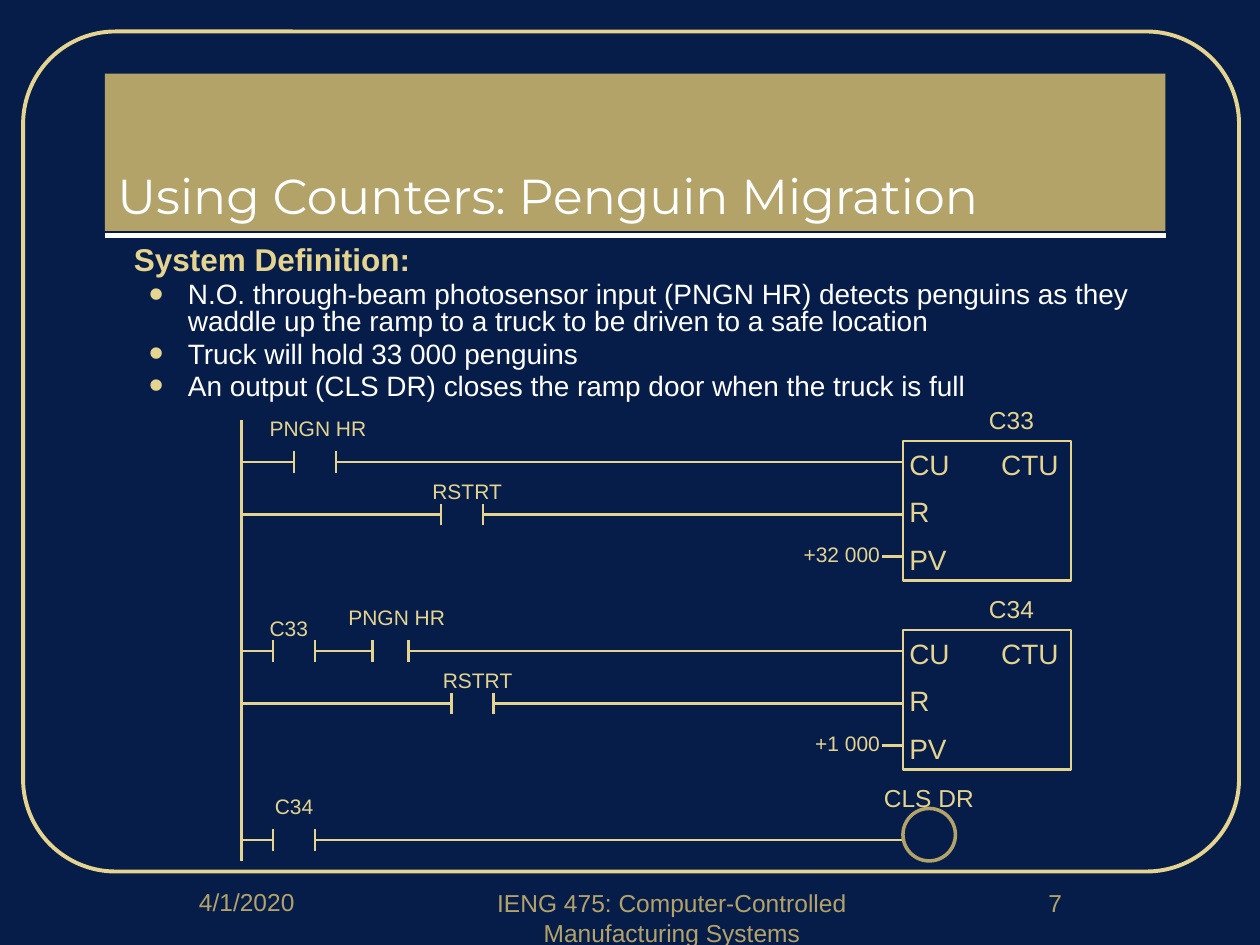
from lxml.etree import SubElement
from pptx import Presentation
from pptx.dml.color import RGBColor
from pptx.enum.shapes import MSO_CONNECTOR as Connector, MSO_SHAPE as Shape
from pptx.enum.text import MSO_ANCHOR as Anchor, PP_ALIGN as Align
from pptx.oxml.ns import qn
from pptx.util import Inches, Pt

NAVY, GOLD, CREAM, WHITE = "071D49", "B3A369", "E4D490", "FFFFFF"
CELL = Inches(1) / 12  # the slide is a grid of 120 columns and 90 rows
color = RGBColor.from_string

presentation = Presentation()
presentation.slide_width, presentation.slide_height = Inches(10), Inches(7.5)
slide = presentation.slides.add_slide(presentation.slide_layouts[6])
slide.background.fill.solid()
slide.background.fill.fore_color.rgb = color(NAVY)


def add_box(kind, column, row, columns, rows, text="", size=12, ink=CREAM,
            align=Align.LEFT, font="Arial", fill=None, line=None, weight=1.5):
    shape = slide.shapes.add_shape(kind, *(round(n * CELL) for n in (column, row, columns, rows)))
    shape.shadow.inherit = False
    if fill:
        shape.fill.solid()
        shape.fill.fore_color.rgb = color(fill)
    else:
        shape.fill.background()
    if line:
        shape.line.color.rgb = color(line)
        shape.line.width = Pt(weight)
    else:
        shape.line.fill.background()
    frame = shape.text_frame
    frame.text = text
    frame.word_wrap = True
    frame.vertical_anchor = Anchor.TOP
    for paragraph in frame.paragraphs:
        paragraph.alignment = align
        for run in paragraph.runs:
            run.font.name, run.font.size = font, Pt(size)
            run.font.color.rgb = color(ink)
    return shape


def add_line(x1, y1, x2, y2, ink=CREAM, weight=1.5):
    line = slide.shapes.add_connector(
        Connector.STRAIGHT, *(round(n * CELL) for n in (x1, y1, x2, y2)))
    line.line.color.rgb = color(ink)
    line.line.width = Pt(weight)
    SubElement(line._element.spPr, qn("a:effectLst"))


# Frame, title and rule
frame_shape = add_box(Shape.ROUNDED_RECTANGLE, 2.2, 3, 115.8, 80, line=CREAM, weight=2.25)
frame_shape.adjustments[0] = 0.11
title = add_box(Shape.RECTANGLE, 10, 7, 101, 15, "Using Counters: Penguin Migration",
                28, WHITE, font="Montserrat", fill=GOLD)
title.text_frame.vertical_anchor = Anchor.BOTTOM
add_line(10, 22.4, 111, 22.4, WHITE, 3)

# Footer
for column, row, columns, text in [
    (10, 83.9, 27, "4/1/2020"),
    (43, 84, 42, "IENG 475: Computer-Controlled Manufacturing Systems"),
    (90, 84, 21, "7"),
]:
    add_box(Shape.RECTANGLE, column, row, columns, 6, text, 14, GOLD, Align.CENTER)

# System definition
definition = [
    "System Definition:",
    "N.O. through-beam photosensor input (PNGN HR) detects penguins as they "
    "waddle up the ramp to a truck to be driven to a safe location",
    "Truck will hold 33 000 penguins",
    "An output (CLS DR) closes the ramp door when the truck is full",
]
body = add_box(Shape.RECTANGLE, 7, 23, 104, 18, "\n".join(definition), 16, WHITE)
heading, *bullets = body.text_frame.paragraphs
for paragraph in body.text_frame.paragraphs:
    paragraph.line_spacing = 0.8
    paragraph.space_before = Pt(3.2)
heading.runs[0].font.size = Pt(18)
heading.runs[0].font.bold = True
heading.runs[0].font.color.rgb = color(CREAM)
heading._p.get_or_add_pPr().set("marL", str(Inches(0.38)))
for paragraph in bullets:
    properties = paragraph._p.get_or_add_pPr()
    properties.set("marL", str(Inches(0.81)))
    properties.set("indent", str(Inches(-0.31)))
    SubElement(SubElement(properties, qn("a:buClr")), qn("a:srgbClr"), val=CREAM)
    SubElement(properties, qn("a:buSzPct"), val="150000")
    SubElement(properties, qn("a:buFont"), typeface="Arial")
    SubElement(properties, qn("a:buChar"), char="•")

# Ladder rail and rungs: each contact is left, right, label, label column, label row
RAIL, OUTPUT = 23, 86
add_line(RAIL, 40, RAIL, 82)
rungs = [
    (44, [(28, 32, "PNGN HR", 24.5, 39)]),
    (49, [(42, 46, "RSTRT", 40, 45)]),
    (62, [(26, 30, "C33", 24.5, 58), (35.5, 38.9, "PNGN HR", 32, 57)]),
    (67, [(43, 47, "RSTRT", 41, 63)]),
    (80, [(26, 30, "C34", 25, 75)]),
]
for row, contacts in rungs:
    start = RAIL
    for left, right, label, label_column, label_row in contacts:
        add_line(start, row, left, row)
        for side in (left, right):
            add_line(side, row - 1, side, row + 1)
        add_box(Shape.RECTANGLE, label_column, label_row, 13, 3.6, label)
        start = right
    add_line(start, row, OUTPUT, row)

# Counters
for top, name, preset in [(42, "C33", "+32 000"), (60, "C34", "+1 000")]:
    counter = add_box(Shape.RECTANGLE, OUTPUT, top, 16, 13.3, "CU\nR\nPV", 16, line=CREAM)
    pins = counter.text_frame
    pins.margin_left = pins.margin_right = pins.margin_top = pins.margin_bottom = Inches(0.05)
    for paragraph in pins.paragraphs[1:]:
        paragraph.space_before = Pt(7.9)
    add_box(Shape.RECTANGLE, 93, top - 4, 10, 4, name, 14)
    add_box(Shape.RECTANGLE, 92, top, 10, 4.4, "CTU", 16, align=Align.RIGHT)
    add_box(Shape.RECTANGLE, 74, top + 9, 11, 3.6, preset, align=Align.RIGHT)
    add_line(OUTPUT - 2, top + 11, OUTPUT, top + 11)

# Door output coil
add_box(Shape.OVAL, OUTPUT, 77, 5, 5, line=GOLD, weight=2)
add_box(Shape.RECTANGLE, 83, 74, 13, 4, "CLS DR", 14)

presentation.save("out.pptx")
